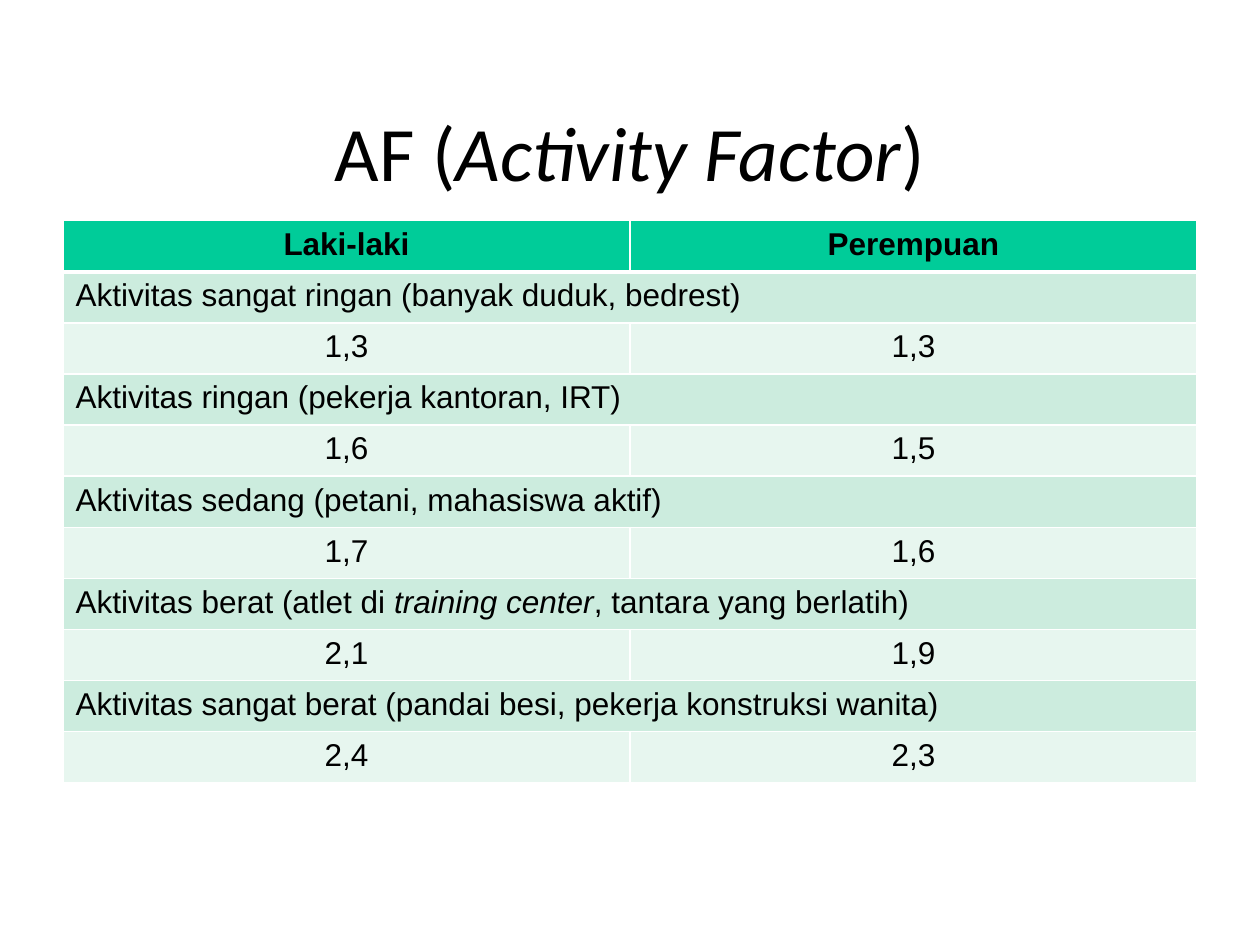
"""Build a slide with a table of activity factors for men and women."""
from lxml.etree import SubElement
from pptx import Presentation
from pptx.dml.color import RGBColor
from pptx.enum.text import MSO_ANCHOR, PP_ALIGN
from pptx.oxml.ns import qn
from pptx.util import Cm, Pt


def add_runs(p, text, font, size, color="000000", bold=False):
    for i, part in enumerate(text.split("*")):
        r = p.add_run()
        r.text = part
        r.font.name, r.font.size = font, Pt(size)
        r.font.bold, r.font.italic = bold, i % 2 == 1
        r.font.color.rgb = RGBColor.from_string(color)


def style_cell(cell, fill, widths):
    tcPr = cell._tc.get_or_add_tcPr()
    for side, width in zip("LRTB", widths):
        ln = SubElement(tcPr, qn(f"a:ln{side}"), w=str(Pt(width)))
        SubElement(SubElement(ln, qn("a:solidFill")), qn("a:srgbClr"), val="FFFFFF")
    cell.fill.solid()
    cell.fill.fore_color.rgb = RGBColor.from_string(fill)


activities = [
    ("Aktivitas sangat ringan (banyak duduk, bedrest)", "1,3", "1,3"),
    ("Aktivitas ringan (pekerja kantoran, IRT)", "1,6", "1,5"),
    ("Aktivitas sedang (petani, mahasiswa aktif)", "1,7", "1,6"),
    ("Aktivitas berat (atlet di *training center*, tantara yang berlatih)", "2,1", "1,9"),
    ("Aktivitas sangat berat (pandai besi, pekerja konstruksi wanita)", "2,4", "2,3"),
]
rows = [("Laki-laki", "Perempuan")]
for activity, male, female in activities:
    rows += [(activity,), (male, female)]

prs = Presentation()
prs.slide_width, prs.slide_height = Cm(25.4), Cm(19.05)
s = prs.slides.add_slide(prs.slide_layouts[5])

title = s.shapes.title
title.left, title.top, title.width, title.height = Cm(1.27), Cm(2.13), Cm(22.86), Cm(1.8)
tf = title.text_frame
tf.vertical_anchor = MSO_ANCHOR.MIDDLE
p = tf.paragraphs[0]
p.alignment = PP_ALIGN.CENTER
add_runs(p, "AF (*Activity Factor*)", "Calibri", 44)

table = s.shapes.add_table(
    len(rows), 2, Cm(1.27), Cm(4.45), Cm(22.86), Cm(1.03 * len(rows))
).table
for i, texts in enumerate(rows):
    table.rows[i].height = Cm(1.03)
    is_header, is_activity = i == 0, len(texts) == 1
    fill = "00CC99" if is_header else "CCECDE" if is_activity else "E7F6EF"
    widths = (1, 1, 3 if i == 1 else 1, 3 if is_header else 1)
    for j in range(2):
        style_cell(table.cell(i, j), fill, widths)
    if is_activity:
        table.cell(i, 0).merge(table.cell(i, 1))
    for j, text in enumerate(texts):
        p = table.cell(i, j).text_frame.paragraphs[0]
        p.alignment = PP_ALIGN.LEFT if is_activity else PP_ALIGN.CENTER
        add_runs(p, text, "Arial", 18, bold=is_header)

prs.save("out.pptx")
